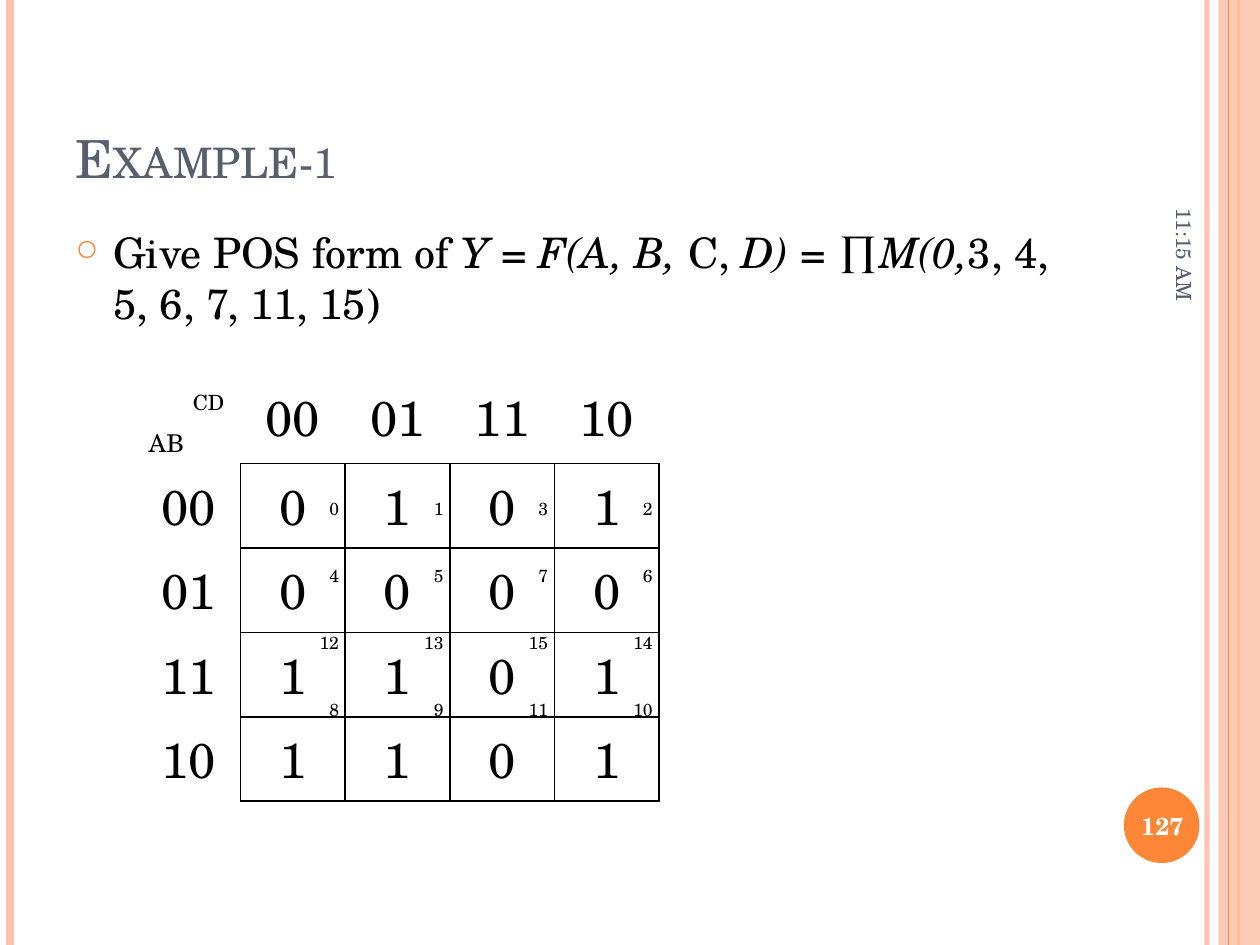
from lxml import etree
from pptx import Presentation
from pptx.dml.color import RGBColor
from pptx.enum import shapes, text
from pptx.oxml.ns import qn
from pptx.util import Inches, Pt

FONT = "TeX Gyre Schola"
ORANGE = RGBColor(0xFE, 0x86, 0x37)
PEACH = RGBColor(0xFE, 0xC3, 0xAE)
SLATE = RGBColor(0x57, 0x5F, 0x6D)
BLACK = RGBColor(0, 0, 0)
WHITE = RGBColor(0xFF, 0xFF, 0xFF)

GRAY_CODE = ["00", "01", "11", "10"]
MAP_VALUES = ["0101", "0000", "1101", "1101"]
CELL_NUMBERS = [[0, 1, 3, 2], [4, 5, 7, 6], [12, 13, 15, 14], [8, 9, 11, 10]]
# (text, italic)
QUESTION = [
    ("Give POS form of ", False), ("Y ", True), ("= ", False),
    ("F(A, B, ", True), ("C, ", False), ("D) ", True), ("= ∏", False),
    ("M(0,", True), ("3, 4, 5, 6, 7, 11, 15)", False),
]


def set_font(paragraph, size, color=BLACK, bold=False):
    font = paragraph.font
    font.name, font.size, font.bold = FONT, Pt(size), bold
    font.color.rgb = color


def set_alpha(color_fill, percent):
    color = color_fill.find(".//" + qn("a:srgbClr"))
    etree.SubElement(color, qn("a:alpha"), val=str(percent * 1000))


def add_stripe(slide, x, color, width, alpha=None):
    stripe = slide.shapes.add_connector(
        shapes.MSO_CONNECTOR.STRAIGHT, Inches(x), 0, Inches(x), Inches(7.5))
    stripe.line.color.rgb = color
    stripe.line.width = Pt(width)
    properties = stripe._element.spPr
    if alpha:
        set_alpha(properties, alpha)
    etree.SubElement(properties, qn("a:effectLst"))


def add_solid(slide, kind, x, y, width, height, color):
    solid = slide.shapes.add_shape(
        kind, Inches(x), Inches(y), Inches(width), Inches(height))
    solid.shadow.inherit = False
    solid.fill.solid()
    solid.fill.fore_color.rgb = color
    solid.line.fill.background()
    return solid


def add_text(slide, x, y, width, height, anchor, runs, size, color=BLACK,
             align=text.PP_ALIGN.LEFT, bold=False, rotation=0):
    box = slide.shapes.add_textbox(
        Inches(x), Inches(y), Inches(width), Inches(height))
    box.rotation = rotation
    frame = box.text_frame
    frame.word_wrap = True
    frame.vertical_anchor = anchor
    paragraph = frame.paragraphs[0]
    paragraph.alignment = align
    set_font(paragraph, size, color, bold)
    for words, italic in runs:
        run = paragraph.add_run()
        run.text = words
        if italic:
            run.font.italic = True
    return paragraph


def add_bullet(paragraph, character, color, percent):
    properties = paragraph._p.get_or_add_pPr()
    properties.set("marL", str(Inches(0.3)))
    properties.set("indent", str(Inches(-0.3)))
    bullet_color = etree.Element(qn("a:buClr"))
    etree.SubElement(bullet_color, qn("a:srgbClr"), val=str(color))
    bullet_size = etree.Element(qn("a:buSzPct"), val=str(percent * 1000))
    bullet = etree.Element(qn("a:buChar"), char=character)
    font_defaults = properties.find(qn("a:defRPr"))
    for part in (bullet_color, bullet_size, bullet):
        font_defaults.addprevious(part)


def set_borders(cell, black_sides):
    properties = cell._tc.get_or_add_tcPr()
    for place, side in enumerate("LRTB"):
        border = etree.Element(qn("a:ln" + side), w=str(Pt(1)))
        if side in black_sides:
            fill = etree.SubElement(border, qn("a:solidFill"))
            etree.SubElement(fill, qn("a:srgbClr"), val=str(BLACK))
        else:
            etree.SubElement(border, qn("a:noFill"))
        properties.insert(place, border)


def add_grid(slide, x, y, column_width, row_heights, columns):
    grid = slide.shapes.add_table(
        len(row_heights), columns, Inches(x), Inches(y),
        Inches(column_width * columns), Inches(sum(row_heights))).table
    grid.first_row = grid.horz_banding = False
    for column in grid.columns:
        column.width = Inches(column_width)
    for row, height in zip(grid.rows, row_heights):
        row.height = Inches(height)
    return grid


def fill_cell(cell, words, size, align, anchor, black_sides=""):
    cell.fill.background()
    cell.vertical_anchor = anchor
    cell.text = words
    for paragraph in cell.text_frame.paragraphs:
        paragraph.alignment = align
        set_font(paragraph, size)
    set_borders(cell, black_sides)


def add_cell_numbers(slide):
    grid = add_grid(slide, 1.96, 3.66, 0.83, [0.53] * 4, 4)
    for r, numbers in enumerate(CELL_NUMBERS):
        for c, number in enumerate(numbers):
            fill_cell(grid.cell(r, c), str(number), 10,
                      text.PP_ALIGN.RIGHT, text.MSO_ANCHOR.BOTTOM)


def add_karnaugh_map(slide):
    grid = add_grid(slide, 1.08, 2.93, 0.83, [0.75] + [0.67] * 4, 5)

    # Corner with the variable names
    corner = grid.cell(0, 0)
    fill_cell(corner, "CD\nAB", 14, text.PP_ALIGN.LEFT, text.MSO_ANCHOR.TOP)
    corner.margin_top = Inches(0.14)
    columns_name, rows_name = corner.text_frame.paragraphs
    columns_name.font.size = Pt(12)
    columns_name._p.get_or_add_pPr().set("marL", str(Inches(0.35)))
    rows_name.space_before = Pt(4)

    # Headings and values
    rows = [GRAY_CODE] + MAP_VALUES
    for r, values in enumerate(rows):
        label = [GRAY_CODE[r - 1]] if r else [None]
        for c, value in enumerate(label + list(values)):
            if value is None:
                continue
            sides = "B" if r == 0 else "R" if c == 0 else "LRTB"
            fill_cell(grid.cell(r, c), value, 28,
                      text.PP_ALIGN.CENTER, text.MSO_ANCHOR.MIDDLE, sides)


def add_frame(slide):
    add_stripe(slide, 9.58, PEACH, 3, 93)
    add_stripe(slide, 0.08, PEACH, 4.5)
    add_stripe(slide, 9.83, ORANGE, 1.5)
    band = add_solid(slide, shapes.MSO_SHAPE.RECTANGLE, 9.67, 0, 0.33, 7.5, PEACH)
    set_alpha(band._element.spPr, 87)
    add_stripe(slide, 9.75, ORANGE, 0.75)
    add_solid(slide, shapes.MSO_SHAPE.OVAL, 8.92, 6.25, 0.6, 0.6, ORANGE)


def main():
    deck = Presentation()
    deck.slide_width, deck.slide_height = Inches(10), Inches(7.5)
    slide = deck.slides.add_slide(deck.slide_layouts[6])
    anchor = text.MSO_ANCHOR

    add_frame(slide)

    # Title and question
    title = add_text(slide, 0.5, 0.3, 8.17, 1.25, anchor.BOTTOM,
                     [("Example-1", False)], 30, SLATE)
    title.runs[0]._r.get_or_add_rPr().set("cap", "small")
    question = add_text(slide, 0.5, 1.75, 8.17, 5.33, anchor.TOP, QUESTION, 24)
    question.space_before = Pt(6)
    add_bullet(question, "○", ORANGE, 70)

    # Karnaugh map
    add_cell_numbers(slide)
    add_karnaugh_map(slide)

    # Page number and time
    add_text(slide, 8.89, 6.27, 0.67, 0.57, anchor.MIDDLE, [("127", False)],
             14, WHITE, text.PP_ALIGN.CENTER, bold=True)
    add_text(slide, 8.3, 1.18, 2.2, 0.42, anchor.MIDDLE, [("11:15 AM", False)],
             12, SLATE, text.PP_ALIGN.RIGHT, rotation=90)

    deck.save("out.pptx")


if __name__ == "__main__":
    main()
